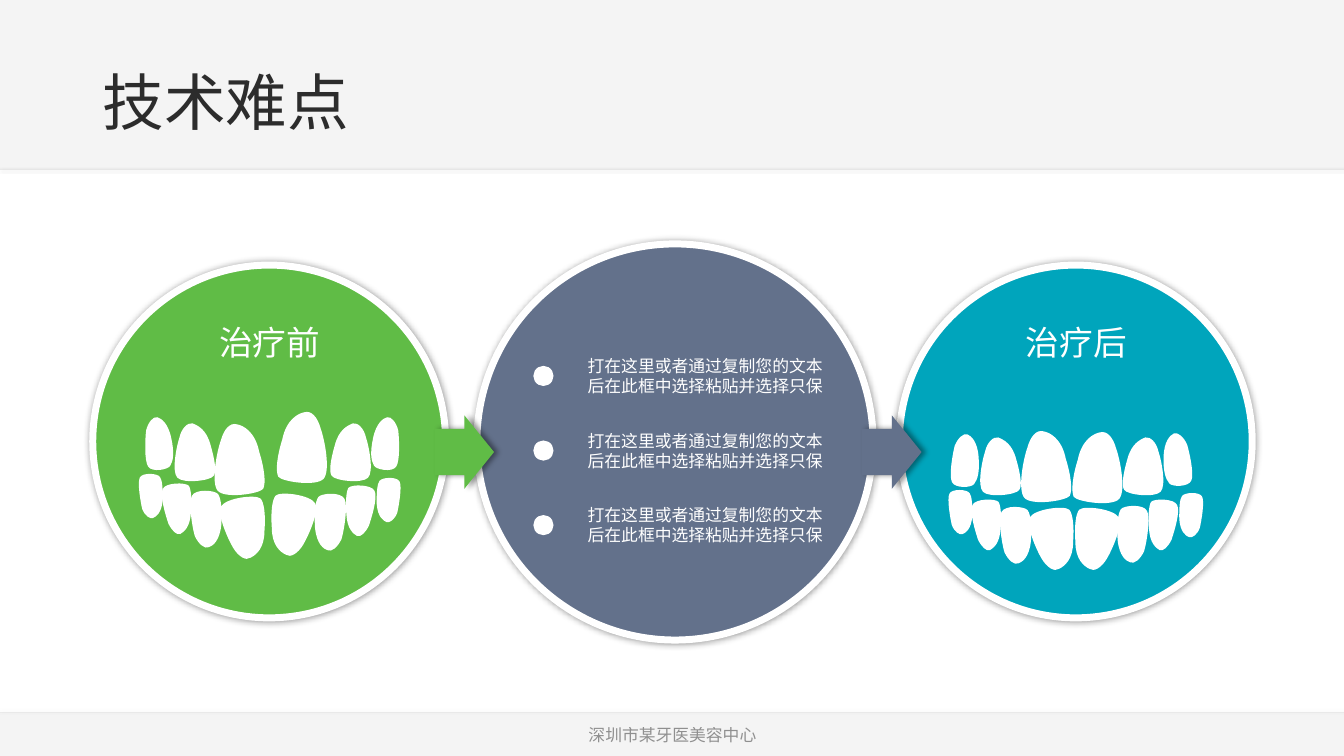
import lxml.etree
import pptx
import pptx.dml.color
import pptx.enum.shapes
import pptx.enum.text
import pptx.oxml.ns
import pptx.util

Inches = pptx.util.Inches
SHAPE = pptx.enum.shapes.MSO_SHAPE
ALIGN = pptx.enum.text.PP_ALIGN
ANCHOR = pptx.enum.text.MSO_ANCHOR
qn = pptx.oxml.ns.qn

COLORS = {"ink": "2C2C2C", "white": "FFFFFF", "black": "000000",
          "green": "60BC46", "slate": "63718B", "teal": "00A5BC"}
FONT = "Calibri"
TITLE = "技术难点"
FOOTER = "深圳市某牙医美容中心"
POINTS = ["打在这里或者通过复制您的文本后在此框中选择粘贴并选择只保"] * 3
POINT_TOP, POINT_STEP = 3.48, 0.74

BANDS = [
    {"top": 0, "height": 1.68, "edge": 1.68, "shadow": (100, 2, 1, 90)},
    {"top": 7.07, "height": 0.43, "edge": 7.07, "shadow": (40, 2, 1, 270)},
]
ARROWS = [(8.55, "slate"), (4.31, "green")]

TOOTH_WIDTHS = {"upper large": 0.49, "upper medium": 0.4, "upper small": 0.28,
                "lower large": 0.44, "lower medium": 0.31, "lower small": 0.29, "lower tiny": 0.24}
TOOTH_CURVES = {
    "upper large": [(0.06, 0.17), (0.09, 0.06), (0.15, -0.01), (0.22, 0.01), (0.28, 0.02), (0.4, 0.08),
                    (0.44, 0.28), (0.49, 0.44), (0.51, 0.59), (0.48, 0.65), (0.44, 0.7), (0.1, 0.75),
                    (0.03, 0.67), (-0.04, 0.59), (0.02, 0.28), (0.06, 0.17)],
    "upper medium": [(0.05, 0.14), (0.07, 0.05), (0.13, -0.01), (0.18, 0), (0.23, 0.02), (0.32, 0.06),
                     (0.36, 0.22), (0.4, 0.36), (0.42, 0.48), (0.39, 0.52), (0.36, 0.57), (0.09, 0.6),
                     (0.03, 0.54), (-0.03, 0.48), (0.02, 0.23), (0.05, 0.14)],
    "upper small": [(0.01, 0.13), (0.03, 0.05), (0.08, -0.01), (0.12, 0), (0.16, 0.01), (0.23, 0.06),
                    (0.26, 0.21), (0.29, 0.35), (0.28, 0.43), (0.25, 0.48), (0.23, 0.52), (0.07, 0.55),
                    (0.03, 0.49), (-0.01, 0.43), (0, 0.21), (0.01, 0.13)],
    "lower large": [(0.07, 0.49), (0.11, 0.58), (0.18, 0.64), (0.23, 0.61), (0.29, 0.59), (0.38, 0.53),
                    (0.4, 0.36), (0.43, 0.21), (0.43, 0.08), (0.4, 0.04), (0.36, -0.01), (0.06, -0.01),
                    (0, 0.07), (-0.05, 0.14), (0.03, 0.4), (0.07, 0.49)],
    "lower medium": [(0.02, 0.44), (0.05, 0.52), (0.11, 0.58), (0.15, 0.56), (0.19, 0.55), (0.26, 0.51),
                     (0.29, 0.35), (0.31, 0.21), (0.31, 0.09), (0.28, 0.04), (0.25, 0), (0.06, -0.03),
                     (0.02, 0.04), (-0.02, 0.1), (0, 0.35), (0.02, 0.44)],
    "lower small": [(0.04, 0.39), (0.07, 0.46), (0.11, 0.51), (0.15, 0.5), (0.19, 0.48), (0.25, 0.44),
                    (0.27, 0.3), (0.29, 0.18), (0.29, 0.07), (0.27, 0.03), (0.24, -0.01), (0.04, -0.02),
                    (0.01, 0.04), (-0.03, 0.1), (0.02, 0.31), (0.04, 0.39)],
    "lower tiny": [(0.01, 0.34), (0.03, 0.41), (0.08, 0.45), (0.11, 0.44), (0.14, 0.43), (0.2, 0.4),
                   (0.22, 0.27), (0.23, 0.16), (0.23, 0.07), (0.21, 0.04), (0.19, 0), (0.04, -0.02),
                   (0.01, 0.03), (-0.02, 0.08), (0, 0.27), (0.01, 0.34)],
}
STAGES = [
    {"label": "治疗前", "color": "green", "left": 0.92, "teeth": {
        "upper large": [(2.13, 4.2, 0), (2.75, 4.08, 0)],
        "upper medium": [(1.73, 4.2, 0), (3.28, 4.2, 0)],
        "upper small": [(1.44, 4.14, 0), (3.68, 4.14, 0)],
        "lower large": [(2.22, 4.93, -6.9), (2.66, 4.9, 6.9)],
        "lower medium": [(1.9, 4.87, -4.2), (3.11, 4.9, 4.2)],
        "lower small": [(1.62, 4.8, -4.2), (3.42, 4.82, 4.2)],
        "lower tiny": [(1.39, 4.7, -4.2), (3.72, 4.74, 4.2)]}},
    {"label": "治疗后", "color": "teal", "left": 8.92, "teeth": {
        "upper large": [(10.13, 4.27, 0), (10.64, 4.28, 0)],
        "upper medium": [(9.72, 4.34, 0), (11.14, 4.34, 0)],
        "upper small": [(9.44, 4.31, 7.5), (11.53, 4.3, -9.9)],
        "lower large": [(10.24, 5.04, -6.9), (10.63, 5.04, 6.9)],
        "lower medium": [(9.93, 5.03, -4.2), (11.07, 5.02, 4.2)],
        "lower small": [(9.65, 4.96, -4.2), (11.38, 4.96, 4.2)],
        "lower tiny": [(9.42, 4.86, -4.2), (11.68, 4.89, 4.2)]}},
]


def rgb(name):
    return pptx.dml.color.RGBColor.from_string(COLORS[name])


def set_alpha(owner, percent):
    color = next(owner.iter(qn("a:srgbClr")))
    lxml.etree.SubElement(color, qn("a:alpha"), val=str(percent * 1000))


def add_shadow(shape, alpha, blur, distance, angle):
    effects = lxml.etree.SubElement(shape.element.spPr, qn("a:effectLst"))
    outer = lxml.etree.SubElement(effects, qn("a:outerShdw"), blurRad=str(pptx.util.Pt(blur)),
                                  dist=str(pptx.util.Pt(distance)), dir=str(angle * 60000),
                                  algn="ctr", rotWithShape="0")
    lxml.etree.SubElement(outer, qn("a:srgbClr"), val=COLORS["black"])
    set_alpha(outer, alpha)


def paint(shape, color, outline=None, shadow=None):
    shape.fill.solid()
    shape.fill.fore_color.rgb = rgb(color)
    if outline:
        shape.line.color.rgb = rgb("white")
        shape.line.width = pptx.util.Pt(outline)
    else:
        shape.line.fill.background()
    if shadow:
        add_shadow(shape, *shadow)
    else:
        shape.shadow.inherit = False


def add_preset(page, kind, left, top, width, height, color, outline=None, shadow=None):
    shape = page.shapes.add_shape(kind, Inches(left), Inches(top), Inches(width), Inches(height))
    paint(shape, color, outline, shadow)
    return shape


def add_text(page, text, left, top, width, height, size, color, align, anchor, after=0):
    box = page.shapes.add_textbox(Inches(left), Inches(top), Inches(width), Inches(height))
    box.text_frame.word_wrap = True
    box.text_frame.vertical_anchor = anchor
    para = box.text_frame.paragraphs[0]
    para.text = text
    para.alignment = align
    para.space_after = pptx.util.Pt(after)
    para.font.size = pptx.util.Pt(size)
    para.font.name = FONT
    para.font.color.rgb = rgb(color)
    return para


def curve_segments(shape):
    segments = list(shape.element.iter(qn("a:lnTo")))
    for start in range(0, len(segments), 3):
        curve = lxml.etree.Element(qn("a:cubicBezTo"))
        segments[start].addprevious(curve)
        for segment in segments[start:start + 3]:
            curve.append(segment[0])
            segment.getparent().remove(segment)


def add_tooth(page, kind, left, top, angle, mirrored):
    outline = [(Inches(left + (TOOTH_WIDTHS[kind] - x if mirrored else x)), Inches(top + y))
               for x, y in TOOTH_CURVES[kind]]
    builder = page.shapes.build_freeform(*outline[0])
    builder.add_line_segments(outline[1:], close=True)
    tooth = builder.convert_to_shape()
    segments = list(tooth.element.iter(qn("a:lnTo")))
    for extra in segments[len(outline) - 1:]:
        extra.getparent().remove(extra)
    curve_segments(tooth)
    tooth.rotation = angle
    paint(tooth, "white")


def add_band(page, band):
    bar = add_preset(page, SHAPE.RECTANGLE, 0, band["top"], 13.33, band["height"], "ink")
    set_alpha(bar.element.spPr, 5)
    edge = page.shapes.add_connector(pptx.enum.shapes.MSO_CONNECTOR.STRAIGHT, 0, Inches(band["edge"]),
                                     Inches(13.33), Inches(band["edge"]))
    edge.line.color.rgb = rgb("ink")
    edge.line.width = pptx.util.Pt(0.5)
    set_alpha(edge.element.spPr, 10)
    add_shadow(edge, *band["shadow"])


def add_stage(page, stage):
    add_preset(page, SHAPE.OVAL, stage["left"], 2.63, 3.5, 3.5, stage["color"], 5, (40, 5, 0, 0))
    for kind, pair in stage["teeth"].items():
        for mirrored, (left, top, angle) in enumerate(pair):
            add_tooth(page, kind, left, top, angle, mirrored)
    add_text(page, stage["label"], stage["left"] + 0.29, 3.14, 2.93, 0.5, 24, "white",
             ALIGN.CENTER, ANCHOR.BOTTOM, 10)


def main():
    deck = pptx.Presentation()
    deck.slide_width, deck.slide_height = Inches(13.33), Inches(7.5)
    page = deck.slides.add_slide(deck.slide_layouts[6])
    for band in BANDS:
        add_band(page, band)
    title = add_text(page, TITLE, 0.92, 0.4, 11.49, 1.03, 44, "ink", ALIGN.LEFT, ANCHOR.BOTTOM)
    title.line_spacing = 0.9
    footer = add_text(page, FOOTER, 4.42, 7.09, 4.5, 0.4, 12, "ink", ALIGN.CENTER, ANCHOR.MIDDLE)
    set_alpha(footer._p, 50)
    for stage in STAGES:
        add_stage(page, stage)
    add_preset(page, SHAPE.OVAL, 4.73, 2.42, 3.93, 3.93, "slate", 5, (40, 5, 0, 0))
    for left, color in ARROWS:
        arrow = add_preset(page, SHAPE.RIGHT_ARROW, left, 4.12, 0.59, 0.73, color, shadow=(40, 4, 3, 0))
        arrow.adjustments[0] = 0.63
    for row, point in enumerate(POINTS):
        top = POINT_TOP + row * POINT_STEP
        add_text(page, point, 5.73, top, 2.68, 0.5, 12, "white", ALIGN.LEFT, ANCHOR.MIDDLE, 10)
        add_preset(page, SHAPE.OVAL, 5.29, top + 0.15, 0.2, 0.2, "white")
    deck.save("out.pptx")


if __name__ == "__main__":
    main()
